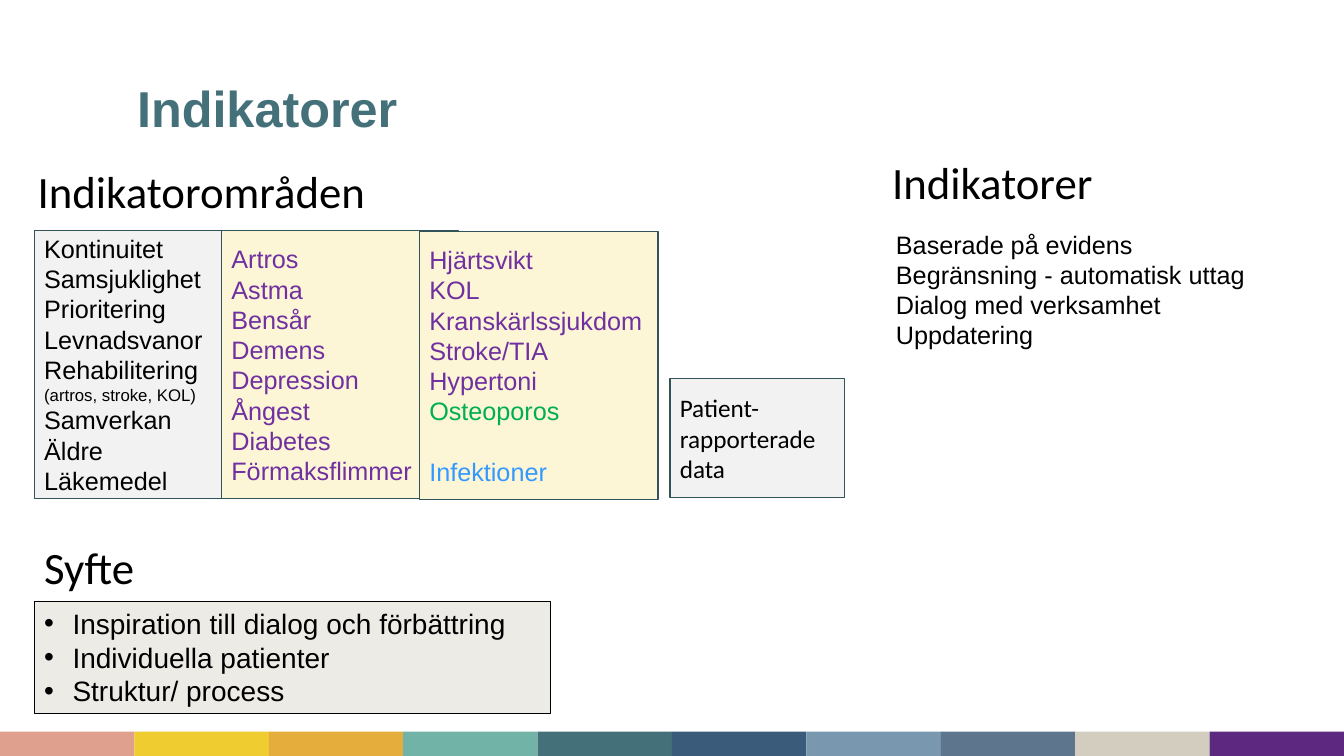
from lxml.etree import SubElement
from pptx import Presentation
from pptx.dml.color import RGBColor
from pptx.enum.shapes import MSO_SHAPE as SHAPE
from pptx.enum.text import MSO_ANCHOR as ANCHOR, MSO_AUTO_SIZE as AUTO, PP_ALIGN as ALIGN
from pptx.oxml.ns import qn
from pptx.util import Pt

# Content
COLORS = {"teal": "447079", "edge": "32535A", "black": "000000", "grey": "F2F2F2",
          "cream": "FCF5D6", "sand": "EDEBE5", "purple": "7030A0",
          "green": "00B050", "blue": "3399FF"}
STRIPES = ["DFA18D", "EFCD30", "E5AD3B", "71B3A7", "447079",
           "3B5B7A", "7997AE", "5D758D", "D3CDBF", "5D287F"]
TITLE = "Indikatorer"
HEADINGS = [  # text, left, top, alignment
    ("Indikatorområden", 5.76, 122.4, ALIGN.CENTER),
    ("Syfte", 27.36, 391, ALIGN.LEFT),
    ("Indikatorer", 633, 116, ALIGN.LEFT),
]
SMALL_LINE = "(artros, stroke, KOL)"
LINE_COLORS = {"Osteoporos": "green", "Infektioner": "blue"}
AREAS = [  # box, fill, text colour, font, lines
    ((24.5, 164.5, 162.7, 191.5), "grey", "black", "Arial",
     ["Kontinuitet", "Samsjuklighet", "Prioritering", "Levnadsvanor", "Rehabilitering",
      SMALL_LINE, "Samverkan", "Äldre", "Läkemedel"]),
    ((478.5, 270.5, 124.8, 84.8), "grey", "black", "Calibri",
     ["Patient-rapporterade", "data"]),
    ((158.2, 164.7, 169.2, 191.5), "cream", "purple", "Arial",
     ["Artros", "Astma", "Bensår", "Demens", "Depression", "Ångest", "Diabetes",
      "Förmaksflimmer"]),
    ((299.6, 165.2, 170.6, 191.5), "cream", "purple", "Arial",
     ["Hjärtsvikt", "KOL", "Kranskärlssjukdom", "Stroke/TIA", "Hypertoni",
      "Osteoporos", "Infektioner"]),
]
PURPOSES = ["Inspiration till dialog och förbättring", "Individuella patienter",
            "Struktur/ process"]
PRINCIPLES = ["Baserade på evidens", "Begränsning - automatisk uttag",
              "Dialog med verksamhet", "Uppdatering"]

prs = Presentation()
prs.slide_width, prs.slide_height = Pt(960), Pt(540)
s = prs.slides.add_slide(prs.slide_layouts[5])


def rgb(name):
    return RGBColor.from_string(COLORS.get(name, name))


def add_box(box, fill, edge=None, weight=1):
    sp = s.shapes.add_shape(SHAPE.RECTANGLE, *map(Pt, box))
    sp.shadow.inherit = False
    sp.fill.solid()
    sp.fill.fore_color.rgb = rgb(fill)
    if edge:
        sp.line.color.rgb = rgb(edge)
        sp.line.width = Pt(weight)
    else:
        sp.line.fill.background()
    return sp


def add_text_box(box):
    return s.shapes.add_textbox(*map(Pt, box))


def add_bullet(p, indent=20.25):
    pPr = p._p.get_or_add_pPr()
    pPr.set("marL", str(Pt(indent)))
    pPr.set("indent", str(-Pt(indent)))
    SubElement(pPr, qn("a:buFont")).set("typeface", "Arial")
    SubElement(pPr, qn("a:buChar")).set("char", "•")


def write(sp, lines, size=18, font="Arial", color="black", anchor=ANCHOR.TOP,
          align=ALIGN.LEFT, bullets=False, bold=False):
    tf = sp.text_frame
    tf.word_wrap = True
    tf.vertical_anchor = anchor
    for i, line in enumerate(lines):
        p = tf.paragraphs[0] if i == 0 else tf.add_paragraph()
        p.alignment = align
        if bullets:
            add_bullet(p)
        r = p.add_run()
        r.text = line
        r.font.name, r.font.bold = font, bold
        r.font.size = Pt(12 if line == SMALL_LINE else size)
        r.font.color.rgb = rgb(LINE_COLORS.get(line, color))
    return tf


# Colour band along the bottom
stripe_width = 960 / len(STRIPES)
for i, color in enumerate(STRIPES):
    add_box((i * stripe_width, 522.5, stripe_width, 17.5), color)

# Title
title = s.shapes.title
title.left, title.top, title.width, title.height = map(Pt, (90.7, 39.6, 851.8, 74.2))
write(title, [TITLE], 36, color="teal", anchor=ANCHOR.MIDDLE, bold=True)

# Indicator areas
for box, fill, color, font, lines in AREAS:
    tf = write(add_box(box, fill, "edge"), lines, font=font, color=color,
               anchor=ANCHOR.MIDDLE)
    if lines[-1] == "Infektioner":
        tf.paragraphs[-1].space_before = Pt(21.6)

# Purpose list and principles
tf = write(add_box((24.5, 429.7, 368.6, 80), "sand", "black", 0.75),
           PURPOSES, 20, bullets=True)
tf.auto_size = AUTO.SHAPE_TO_FIT_TEXT
tf = write(add_text_box((632.9, 160, 294.5, 94.3)), PRINCIPLES)
tf.auto_size = AUTO.SHAPE_TO_FIT_TEXT

# Section headings
for text, left, top, align in HEADINGS:
    tf = write(add_text_box((left, top, 276.5, 32.4)), [text], 32, "Calibri",
               anchor=ANCHOR.MIDDLE, align=align)
    tf.margin_left = tf.margin_right = Pt(4.2)
    tf.margin_top = tf.margin_bottom = Pt(2.1)
    tf.paragraphs[0].line_spacing = 0.9

prs.save("out.pptx")
